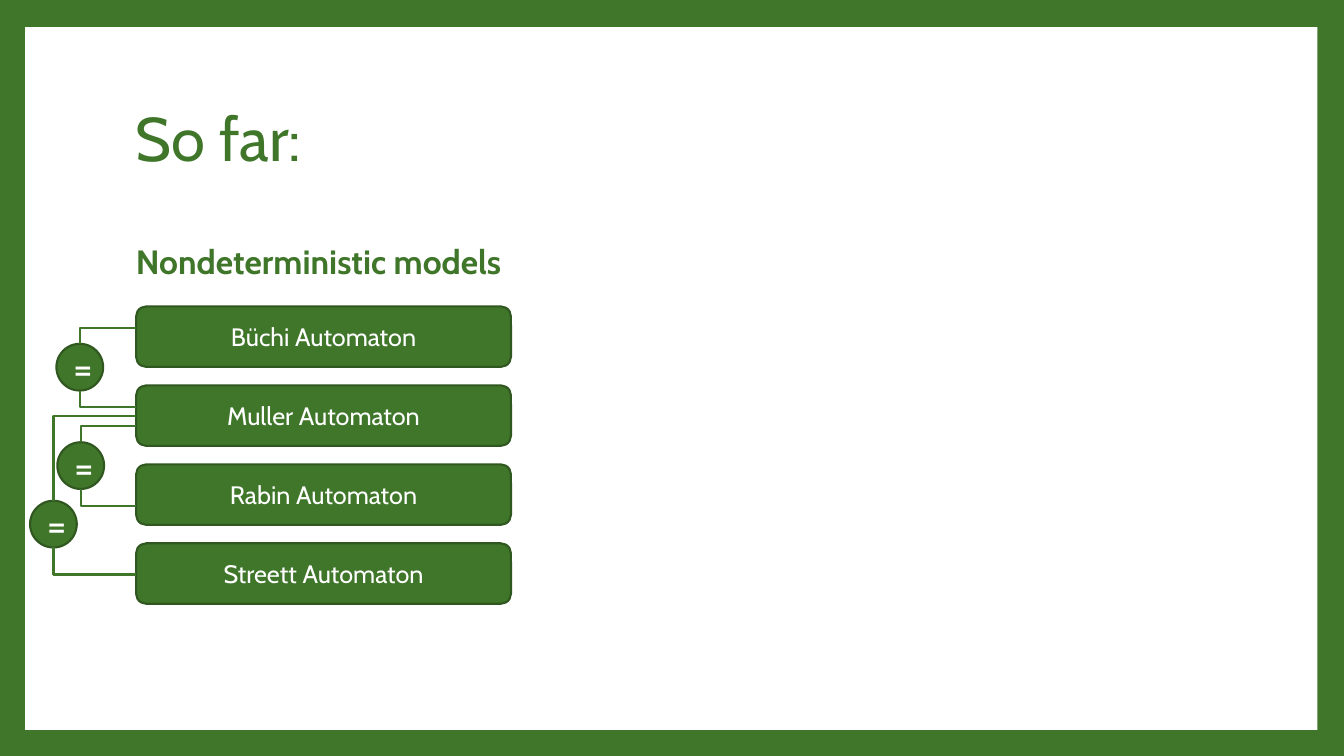
from lxml.etree import SubElement
from pptx import Presentation
from pptx.dml.color import RGBColor
from pptx.enum.shapes import MSO_CONNECTOR, MSO_SHAPE
from pptx.enum.text import MSO_ANCHOR, PP_ALIGN
from pptx.oxml.ns import qn
from pptx.util import Pt

GREEN = RGBColor(0x3F, 0x76, 0x2A)
DARK_GREEN = RGBColor(0x2F, 0x57, 0x1F)
WHITE = RGBColor(0xFF, 0xFF, 0xFF)
FONT = "Cabin"
LINE_WIDTH = 1.5

AUTOMATA = ["Büchi", "Muller", "Rabin", "Streett"]
BOX_HEIGHT = 43.2
BOX_PITCH = 56.4
CIRCLE_SIZE = 33.4

# Circle centre x and y, then the heights where its upper and lower links meet the boxes
EQUIVALENCES = [
    (57, 262.3, 234, 290.7),
    (57.7, 332.6, 304.4, 361.2),
    (38.2, 374.4, 297.4, 410.4),
]


def write_text(shape, text, size, color, bold=False, align=PP_ALIGN.LEFT, spacing=1.0):
    frame = shape.text_frame
    frame.word_wrap = True
    frame.vertical_anchor = MSO_ANCHOR.MIDDLE
    paragraph = frame.paragraphs[0]
    paragraph.alignment = align
    paragraph.line_spacing = spacing
    run = paragraph.add_run()
    run.text = text
    run.font.name = FONT
    run.font.size = Pt(size)
    run.font.bold = bold
    run.font.color.rgb = color


def add_filled_shape(shapes, kind, left, top, width, height, fill, line=None):
    shape = shapes.add_shape(kind, Pt(left), Pt(top), Pt(width), Pt(height))
    shape.shadow.inherit = False
    shape.fill.solid()
    shape.fill.fore_color.rgb = fill
    if line is None:
        shape.line.fill.background()
    else:
        shape.line.color.rgb = line
        shape.line.width = Pt(LINE_WIDTH)
    return shape


def add_bent_link(shapes, start_x, start_y, end_x, end_y):
    """Run level from the start, then turn once towards the end."""
    link = shapes.add_connector(
        MSO_CONNECTOR.ELBOW, Pt(start_x), Pt(start_y), Pt(end_x), Pt(end_y))
    link.line.color.rgb = GREEN
    link.line.width = Pt(LINE_WIDTH)
    properties = link._element.spPr
    properties.find(qn("a:prstGeom")).set("prst", "bentConnector2")
    SubElement(properties, qn("a:effectLst"))


def add_frame(slide, left, top, width, height):
    slide.background.fill.solid()
    slide.background.fill.fore_color.rgb = GREEN
    add_filled_shape(slide.shapes, MSO_SHAPE.RECTANGLE, left, top, width, height, WHITE)


def add_heading(slide, text, left, top, width, height, **text_format):
    box = slide.shapes.add_textbox(Pt(left), Pt(top), Pt(width), Pt(height))
    write_text(box, text, color=GREEN, spacing=0.9, **text_format)


def add_automata(slide, left, top, width):
    for row, name in enumerate(AUTOMATA):
        box = add_filled_shape(
            slide.shapes, MSO_SHAPE.ROUNDED_RECTANGLE, left, top + row * BOX_PITCH,
            width, BOX_HEIGHT, GREEN, DARK_GREEN)
        write_text(box, f"{name} Automaton", 18, WHITE, align=PP_ALIGN.CENTER)


def add_equivalence(slide, box_left, center_x, center_y, upper_y, lower_y):
    shapes = slide.shapes.add_group_shape().shapes
    radius = CIRCLE_SIZE / 2
    circle = add_filled_shape(
        shapes, MSO_SHAPE.FLOWCHART_CONNECTOR, center_x - radius, center_y - radius,
        CIRCLE_SIZE, CIRCLE_SIZE, GREEN, DARK_GREEN)
    write_text(circle, "=", 28, WHITE, align=PP_ALIGN.CENTER)
    add_bent_link(shapes, box_left, upper_y, center_x, center_y - radius)
    add_bent_link(shapes, box_left, lower_y, center_x, center_y + radius)


def main():
    presentation = Presentation()
    presentation.slide_width = Pt(960)
    presentation.slide_height = Pt(540)
    slide = presentation.slides.add_slide(presentation.slide_layouts[6])

    # Green border and headings
    add_frame(slide, 18, 19.4, 923, 502)
    add_heading(slide, "So far:", 90, 48, 778, 106.6, size=44)
    add_heading(slide, "Nondeterministic models", 90, 157.7, 374.4, 61.2, size=24, bold=True)

    # Automata and the links between equivalent ones
    automata_left = 97.2
    add_automata(slide, automata_left, 218.9, 267.8)
    for equivalence in EQUIVALENCES:
        add_equivalence(slide, automata_left, *equivalence)

    presentation.save("out.pptx")


if __name__ == "__main__":
    main()
